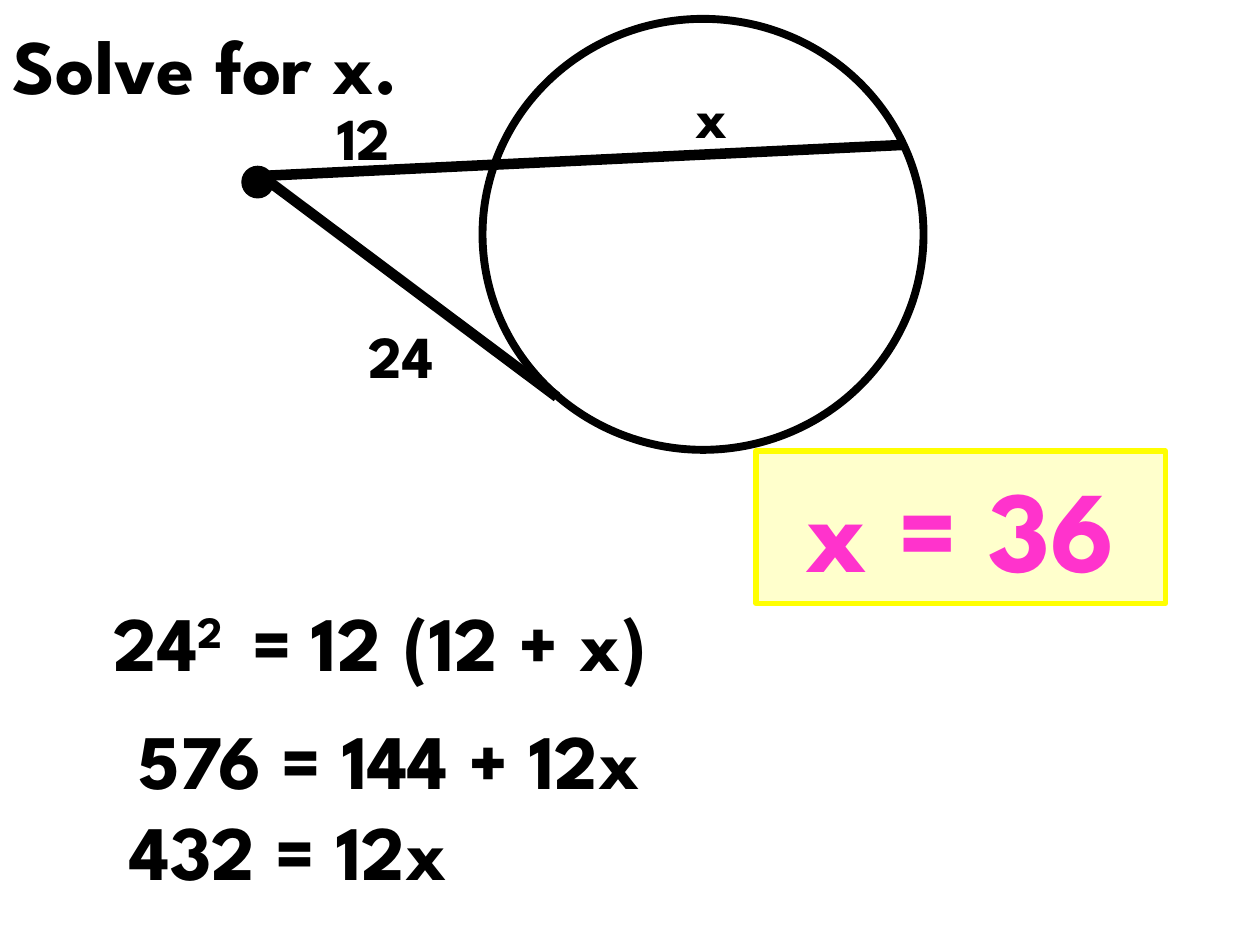
import lxml.etree
import pptx
import pptx.dml.color
import pptx.enum.shapes
import pptx.enum.text
import pptx.oxml.ns
import pptx.util

Inches = pptx.util.Inches
ALIGN = pptx.enum.text.PP_ALIGN
ANCHOR = pptx.enum.text.MSO_ANCHOR
OVAL = pptx.enum.shapes.MSO_SHAPE.OVAL
FONT = "League Spartan"
BLACK = "000000"


def color(value):
    """Return an RGB colour for a hex string."""
    return pptx.dml.color.RGBColor.from_string(value)


def place(shape, left, top, width, height):
    """Move and size a shape in inches."""
    shape.left, shape.top = Inches(left), Inches(top)
    shape.width, shape.height = Inches(width), Inches(height)


def write_text(shape, text, size=44, hex_color=BLACK, align=ALIGN.CENTER,
               anchor=ANCHOR.TOP, superscript="", spaced=True):
    """Write one bold paragraph into a shape, with an optional superscript."""
    frame = shape.text_frame
    frame.word_wrap = True
    frame.auto_size = pptx.enum.text.MSO_AUTO_SIZE.SHAPE_TO_FIT_TEXT
    frame.vertical_anchor = anchor
    paragraph = frame.paragraphs[0]
    paragraph.alignment = align
    for part in filter(None, (text, superscript)):
        run = paragraph.add_run()
        run.text = part
        run.font.name = FONT
        run.font.size = pptx.util.Pt(size)
        run.font.bold = True
        run.font.color.rgb = color(hex_color)
    if superscript:
        run.font._element.set("baseline", "30000")
    if spaced:
        properties = paragraph._p.get_or_add_pPr()
        before = lxml.etree.SubElement(properties, pptx.oxml.ns.qn("a:spcBef"))
        lxml.etree.SubElement(before, pptx.oxml.ns.qn("a:spcPct"), val="50000")


def add_text(slide, text, left, top, width, height, **text_format):
    """Add a text box."""
    box = slide.shapes.add_textbox(*map(Inches, (left, top, width, height)))
    write_text(box, text, **text_format)


def add_outline(slide, kind, left, top, width, height, fill=None, line=BLACK, weight=0.75):
    """Add a preset shape with a plain line and an optional fill."""
    shape = slide.shapes.add_shape(kind, *map(Inches, (left, top, width, height)))
    shape.shadow.inherit = False
    if fill:
        shape.fill.solid()
        shape.fill.fore_color.rgb = color(fill)
    else:
        shape.fill.background()
    shape.line.color.rgb = color(line)
    shape.line.width = pptx.util.Pt(weight)
    return shape


def add_segment(slide, start, end):
    """Add a thick straight line between two points."""
    segment = slide.shapes.add_connector(
        pptx.enum.shapes.MSO_CONNECTOR.STRAIGHT, *map(Inches, (*start, *end)))
    segment.line.color.rgb = color(BLACK)
    segment.line.width = pptx.util.Pt(6)
    lxml.etree.SubElement(segment._element.spPr, pptx.oxml.ns.qn("a:effectLst"))


def add_title(slide, text, left, top, width, height):
    """Format the title placeholder."""
    place(slide.shapes.title, left, top, width, height)
    write_text(slide.shapes.title, text, align=ALIGN.LEFT, anchor=ANCHOR.BOTTOM, spaced=False)


def add_diagram(slide, left, top):
    """Draw the circle with its tangent and secant from an outside point."""
    add_outline(slide, OVAL, left + 1.91, top, 3.5, 3.42, weight=4.5)
    add_segment(slide, (left + 0.16, top + 1.25), (left + 2.5, top + 3))
    add_segment(slide, (left + 0.08, top + 1.25), (left + 5.25, top + 1))
    for label, x, y in (("24", 0.91, 2.33), ("12", 0.66, 0.6), ("x", 3.5, 0.43)):
        add_text(slide, label, left + x, top + y, 1.17, 0.67, size=34, align=ALIGN.LEFT)
    add_outline(slide, OVAL, left, top + 1.17, 0.25, 0.25, fill=BLACK)


def add_solution(slide, left, top):
    """Write the steps of the solution."""
    add_text(slide, "24", left + 0.75, top, 1.17, 0.83, superscript="2")
    for text, x, width in (("=", 1.58, 1.17), ("12", 2.25, 1), ("(12 + x)", 2.92, 2.5)):
        add_text(slide, text, left + x, top, width, 0.83)
    for text, y, width in (("576 = 144 + 12x", 0.94, 6.19), ("432 = 12x", 1.66, 4.58)):
        add_text(slide, text, left, top + y, width, 0.84)


def add_answer(slide, text, left, top, width, height):
    """Add the highlighted answer box."""
    box = add_outline(slide, pptx.enum.shapes.MSO_SHAPE.RECTANGLE, left, top, width, height,
                      fill="FFFFCC", line="FFFF00", weight=3)
    write_text(box, text, size=66, hex_color="FF33CC")


def main():
    """Build and save the slide."""
    presentation = pptx.Presentation()
    presentation.slide_width, presentation.slide_height = Inches(10), Inches(7.5)
    slide = presentation.slides.add_slide(presentation.slide_layouts[5])
    add_title(slide, "Solve for x.", 0, 0.08, 8.17, 0.84)
    add_diagram(slide, 1.92, 0.15)
    add_solution(slide, 0, 4.67)
    add_answer(slide, "x = 36", 6, 3.58, 3.25, 1.21)
    presentation.save("out.pptx")


if __name__ == "__main__":
    main()
